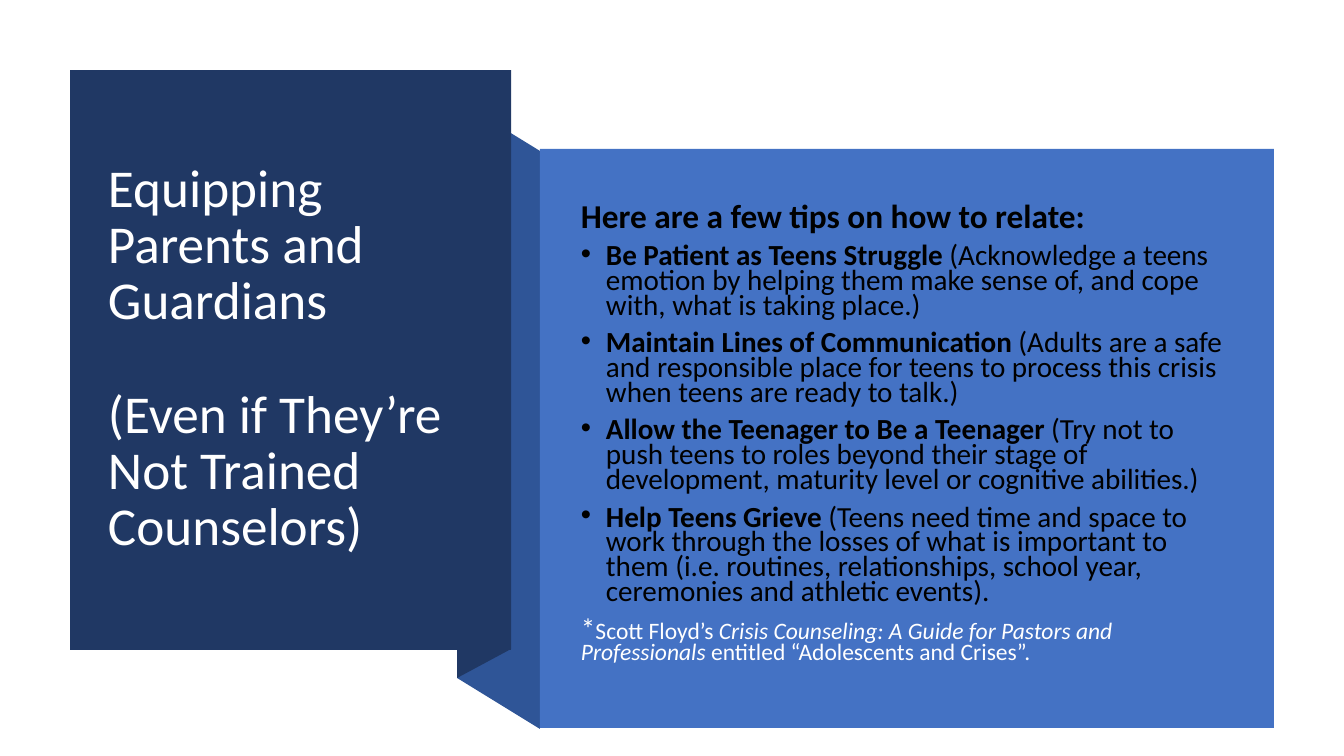
"""Build a slide of tips that equip parents and guardians to relate to teens."""
import pptx
import pptx.util
import pptx.dml.color
import pptx.enum.shapes
import pptx.enum.text
import lxml.etree

SLIDE = (1344, 756)
WHITE, BLACK = "FFFFFF", "000000"
NAVY, MID_BLUE, BLUE = "203864", "2F5597", "4472C4"
FONT = "Calibri"

TITLE = ["Equipping Parents and Guardians", "(Even if They’re Not Trained Counselors)"]
HEADING = "Here are a few tips on how to relate:"
TIPS = [
    ("Be Patient as Teens Struggle",
     " (Acknowledge a teens emotion by helping them make sense of, and cope with, "
     "what is taking place.)"),
    ("Maintain Lines of Communication",
     " (Adults are a safe and responsible place for teens to process this crisis "
     "when teens are ready to talk.)"),
    ("Allow the Teenager to Be a Teenager",
     " (Try not to push teens to roles beyond their stage of development, "
     "maturity level or cognitive abilities.)"),
    ("Help Teens Grieve",
     " (Teens need time and space to work through the losses of what is important "
     "to them (i.e. routines, relationships, school year, ceremonies and athletic events)."),
]
SOURCE = [
    ("*", {"size": 20.8}),
    ("Scott Floyd’s ", {}),
    ("Crisis Counseling: A Guide for Pastors and Professionals", {"italic": True}),
    (" entitled “Adolescents and Crises”.", {}),
]

FOLDS = [
    (MID_BLUE, [(540, 729), (457, 678), (457, 100), (540, 151)]),
    (NAVY, [(511, 649), (457, 678), (457, 99), (511, 70)]),
]
PANELS = [(NAVY, (70, 70, 441, 580)), (BLUE, (540, 149, 734, 579))]
TITLE_BOX = (103, 108, 374, 503)
BODY_BOX = (576, 168, 656, 538)
INSET, INDENT = 5, 25
EMU_PER_PX = 914400 / 100.8


def px(n):
    return pptx.util.Emu(round(n * EMU_PER_PX))


def rgb(color):
    return pptx.dml.color.RGBColor.from_string(color)


def paint(sp, color):
    sp.shadow.inherit = False
    sp.fill.solid()
    sp.fill.fore_color.rgb = rgb(color)
    sp.line.fill.background()


def add_text(p, text, size=20.8, color=BLACK, bold=False, italic=False):
    r = p.add_run()
    r.text = text
    f = r.font
    f.name, f.size, f.bold, f.italic = FONT, pptx.util.Pt(size), bold, italic
    f.color.rgb = rgb(color)


def add_paragraph(tf, spacing, before=0, bullet=False):
    first = tf.paragraphs[0]
    p = tf.add_paragraph() if first.runs else first
    p.alignment = pptx.enum.text.PP_ALIGN.LEFT
    p.line_spacing = spacing
    p.space_before = pptx.util.Pt(before)
    p.space_after = pptx.util.Pt(0)
    pPr = p._p.get_or_add_pPr()
    indent = px(INDENT) if bullet else 0
    pPr.set("marL", str(indent))
    pPr.set("indent", str(-indent))
    ns = pptx.oxml.ns.qn
    if bullet:
        lxml.etree.SubElement(pPr, ns("a:buFont")).set("typeface", "Arial")
        lxml.etree.SubElement(pPr, ns("a:buChar")).set("char", "•")
    else:
        lxml.etree.SubElement(pPr, ns("a:buNone"))
    return p


def place(s, sp, box):
    """Move a placeholder to the front at its box and return its text frame."""
    sp.left, sp.top, sp.width, sp.height = map(px, box)
    s.shapes._spTree.append(sp._element)
    tf = sp.text_frame
    tf.word_wrap = True
    tf.auto_size = pptx.enum.text.MSO_AUTO_SIZE.NONE
    tf.vertical_anchor = pptx.enum.text.MSO_ANCHOR.MIDDLE
    tf.margin_left = tf.margin_right = tf.margin_top = tf.margin_bottom = px(INSET)
    return tf


def main():
    prs = pptx.Presentation()
    prs.slide_width, prs.slide_height = map(px, SLIDE)
    s = prs.slides.add_slide(prs.slide_layouts[1])

    for color, points in FOLDS:
        builder = s.shapes.build_freeform(*points[0], scale=EMU_PER_PX)
        builder.add_line_segments(points[1:], close=True)
        paint(builder.convert_to_shape(), color)
    for color, box in PANELS:
        rect = pptx.enum.shapes.MSO_SHAPE.RECTANGLE
        paint(s.shapes.add_shape(rect, *map(px, box)), color)

    tf = place(s, s.shapes.title, TITLE_BOX)
    for i, text in enumerate(TITLE):
        add_text(add_paragraph(tf, 0.88, before=41 * i), text, size=38, color=WHITE)

    tf = place(s, s.placeholders[1], BODY_BOX)
    add_text(add_paragraph(tf, 0.58, before=9), HEADING, size=23.8, bold=True)
    for tip, detail in TIPS:
        p = add_paragraph(tf, 0.71, before=9, bullet=True)
        add_text(p, tip, bold=True)
        add_text(p, detail)
    p = add_paragraph(tf, 0.71, before=9)
    for text, style in SOURCE:
        add_text(p, text, **{"size": 16.8, "color": WHITE, **style})

    prs.save("out.pptx")


if __name__ == "__main__":
    main()
